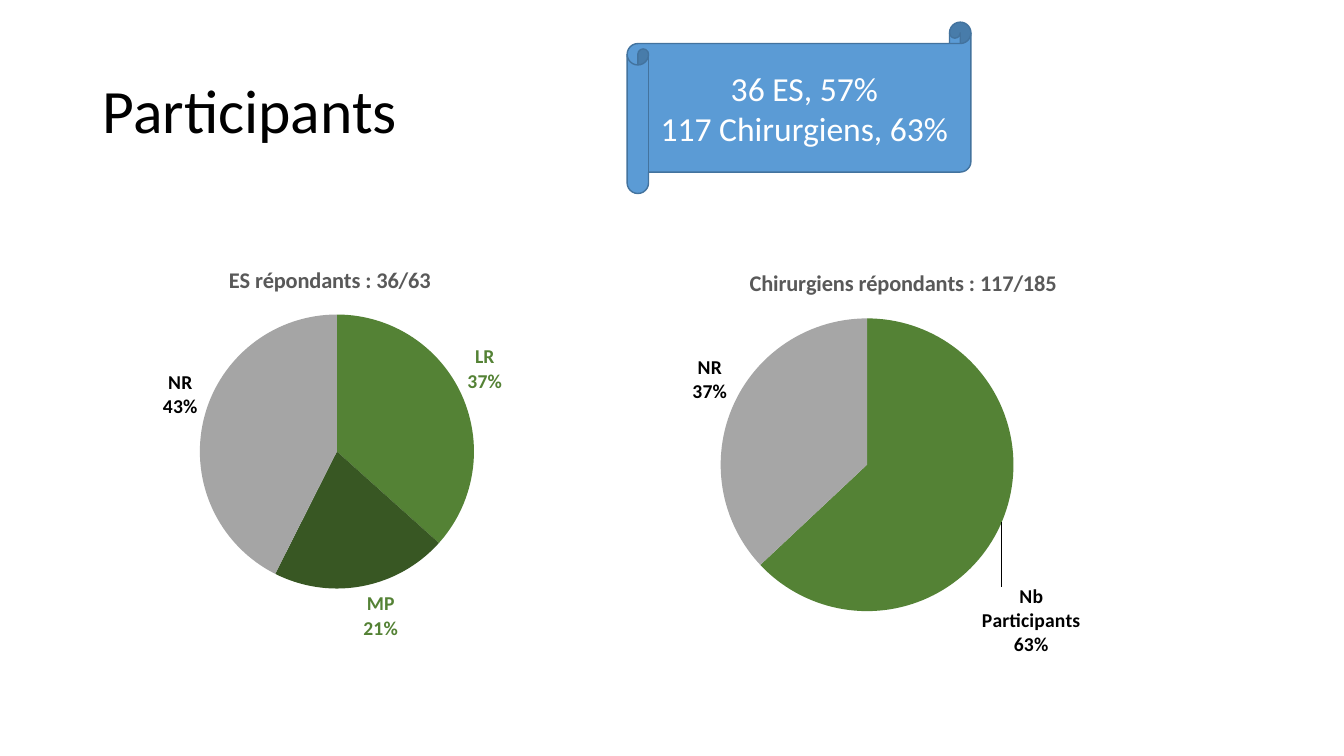
from pptx import Presentation
from pptx.chart.data import CategoryChartData
from pptx.dml.color import RGBColor
from pptx.enum.chart import XL_CHART_TYPE as Chart, XL_LABEL_POSITION as Pos
from pptx.enum.shapes import MSO_SHAPE as Shape
from pptx.enum.text import MSO_ANCHOR as Anchor, PP_ALIGN as Align
from pptx.oxml import parse_xml
from pptx.oxml.ns import nsdecls, qn
from pptx.util import Inches, Pt

FONT = "Calibri"
BLACK, WHITE, GREEN, DARK = "000000", "FFFFFF", "548235", "385723"


def color(code):
    return RGBColor.from_string(code)


def style(font, size, code, bold=False):
    font.name, font.size, font.bold = FONT, Pt(size), bold
    font.color.rgb = color(code)


def write(frame, text, size=24, code=BLACK, align=Align.LEFT, space=1.0, bold=False):
    frame.word_wrap = True
    frame.vertical_anchor = Anchor.MIDDLE
    for i, line in enumerate(text.split("\n")):
        para = frame.paragraphs[0] if i == 0 else frame.add_paragraph()
        para.alignment, para.line_spacing = align, space
        run = para.add_run()
        run.text = line
        style(run.font, size, code, bold)


def heading(slide, text, box):
    frame = slide.shapes.add_textbox(*map(Inches, box)).text_frame
    write(frame, text, size=44, space=0.9)


def scroll(slide, text, box):
    shape = slide.shapes.add_shape(Shape.HORIZONTAL_SCROLL, *map(Inches, box))
    shape.shadow.inherit = False
    shape.fill.solid()
    shape.fill.fore_color.rgb = color("5B9BD5")
    shape.line.color.rgb = color("43739E")
    shape.line.width = Pt(1)
    write(shape.text_frame, text, code=WHITE, align=Align.CENTER)


def place(node, index, inner=False, edge=True, **spots):
    """Give a chart part a manual layout in shares of the chart's size."""
    for old in node.findall(qn("c:layout")):
        node.remove(old)
    parts = '<c:layoutTarget val="inner"/>' if inner else ""
    if edge:
        parts += '<c:xMode val="edge"/><c:yMode val="edge"/>'
    parts += "".join(f'<c:{key} val="{val}"/>' for key, val in spots.items())
    node.insert(index, parse_xml(
        f'<c:layout {nsdecls("c")}><c:manualLayout>{parts}</c:manualLayout></c:layout>'))


def show(node):
    """Show category and percentage on two lines."""
    for name, val in (("Val", 0), ("CatName", 1), ("Percent", 1)):
        node.find(qn(f"c:show{name}")).set("val", str(val))
    mark = parse_xml(f'<c:separator {nsdecls("c")}>\n</c:separator>')
    lead = node.find(qn("c:showLeaderLines"))
    if lead is None:
        node.append(mark)
    else:
        lead.addprevious(mark)


def pie(slide, title, box, slices, name, plot, code, shift=None):
    """Draw a pie from rows of category, value, fill and label colour."""
    data = CategoryChartData()
    data.categories = [row[0] for row in slices]
    data.add_series("Series 1", [row[1] for row in slices])
    chart = slide.shapes.add_chart(Chart.PIE, *map(Inches, box), data).chart
    style(chart.font, 10, BLACK)
    chart.has_legend = False
    chart.has_title = True
    write(chart.chart_title.text_frame, title, size=16, code="595959",
          align=Align.CENTER, bold=True)
    place(chart.chart_title._element, 1, **name)
    place(chart._chartSpace.chart.plotArea, 0, inner=True, **plot)

    chart.plots[0].vary_by_categories = True
    series = chart.plots[0].series[0]
    labels = series.data_labels
    labels.position = Pos.OUTSIDE_END
    style(labels.font, 14, code, bold=True)
    show(labels._element)
    for i, (_, _, fill, ink) in enumerate(slices):
        point = series.points[i]
        point.format.fill.solid()
        point.format.fill.fore_color.rgb = color(fill)
        point.format.line.fill.background()
        style(point.data_label.font, 14, ink, bold=True)
        point.data_label.position = Pos.OUTSIDE_END
    for i, node in enumerate(labels._element.findall(qn("c:dLbl"))):
        show(node)
        if shift and i == 0:
            place(node, 1, edge=False, **shift)


def main():
    deck = Presentation()
    deck.slide_width, deck.slide_height = Inches(13.33), Inches(7.5)
    slide = deck.slides.add_slide(deck.slide_layouts[6])
    heading(slide, "Participants", (0.92, 0.4, 11.5, 1.45))
    scroll(slide, "36 ES, 57%\n117 Chirurgiens, 63%", (6.22, 0.22, 3.41, 1.7))
    pie(slide, "ES répondants : 36/63", (0.19, 2.43, 6.18, 4.06),
        [("LR", 37, GREEN, GREEN), ("MP", 21, DARK, GREEN), ("NR", 43, "A5A5A5", BLACK)],
        name=dict(x=0.33, y=0.04), plot=dict(x=0.29, y=0.17, w=0.44, h=0.67), code=GREEN)
    pie(slide, "Chirurgiens répondants : 117/185", (5.85, 2.46, 6.18, 4.06),
        [("Nb Participants", 63, GREEN, BLACK), ("NR", 37, "A6A6A6", BLACK)],
        name=dict(x=0.25, y=0.04), plot=dict(x=0.21, y=0.17, w=0.47, h=0.72), code=BLACK,
        shift=dict(x=-0.04, y=0.15))
    deck.save("out.pptx")


if __name__ == "__main__":
    main()
